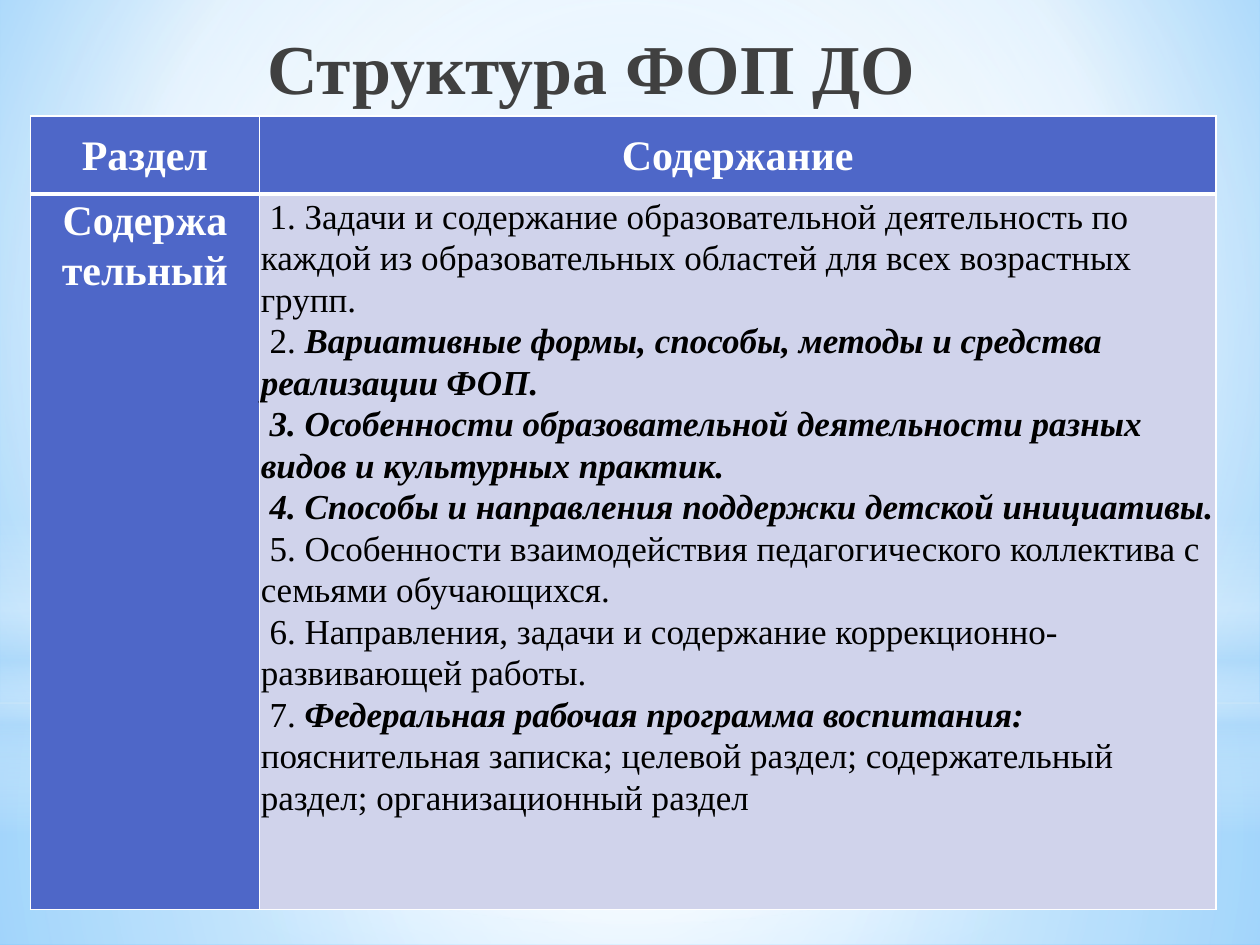
"""Build a slide with a section table on a soft blue gradient background."""
from dataclasses import dataclass

from lxml import etree
from pptx import Presentation
from pptx.dml.color import RGBColor
from pptx.enum.shapes import MSO_SHAPE
from pptx.enum.text import MSO_ANCHOR, PP_ALIGN
from pptx.oxml.ns import qn
from pptx.util import Inches, Pt

RECT, OVAL = MSO_SHAPE.RECTANGLE, MSO_SHAPE.OVAL
LEFT, CENTER, RIGHT = PP_ALIGN.LEFT, PP_ALIGN.CENTER, PP_ALIGN.RIGHT
TOP, MIDDLE = MSO_ANCHOR.TOP, MSO_ANCHOR.MIDDLE


@dataclass(frozen=True)
class Theme:
    font: str = "Times New Roman"
    title: str = "404040"
    white: str = "FFFFFF"
    black: str = "000000"
    accent: str = "4E67C8"
    pale: str = "D0D3EB"
    sky: str = "B4DCFA"
    bg_inner: str = "9ED5FF"
    bg_outer: str = "5BB9FF"
    title_size: int = 40
    head_size: int = 24
    body_size: int = 20


T = Theme()


def add_text(p, text, size=T.body_size, color=T.black, bold=False, italic=False):
    for i, line in enumerate(text.split("\n")):
        if i:
            p.add_line_break()
        if line:
            r = p.add_run()
            r.text = line
            r.font.name, r.font.size = T.font, Pt(size)
            r.font.bold, r.font.italic = bold, italic
            r.font.color.rgb = RGBColor.from_string(color)


def set_gradient(owner, fill, stops, center=None):
    fill.gradient()
    grad = owner.find(".//" + qn("a:gradFill"))
    for child in list(grad):
        grad.remove(child)
    gs_list = etree.SubElement(grad, qn("a:gsLst"))
    for pos, color, opacity in stops:
        gs = etree.SubElement(gs_list, qn("a:gs"), pos=str(pos * 1000))
        clr = etree.SubElement(gs, qn("a:srgbClr"), val=color)
        if opacity < 100:
            etree.SubElement(clr, qn("a:alpha"), val=str(opacity * 1000))
    if center:
        shade = etree.SubElement(grad, qn("a:path"), path="circle")
        sides = {k: str(v * 1000) for k, v in zip("ltrb", center)}
        etree.SubElement(shade, qn("a:fillToRect"), **sides)
    else:
        etree.SubElement(grad, qn("a:lin"), ang="5400000", scaled="0")


prs = Presentation()
prs.slide_width, prs.slide_height = Inches(10), Inches(7.5)
s = prs.slides.add_slide(prs.slide_layouts[5])

set_gradient(s._element, s.background.fill,
             [(0, T.bg_inner, 100), (60, T.white, 100), (100, T.bg_outer, 100)],
             (20, 10, 20, 60))

MID = (50, 50, 50, 50)
glows = [
    (RECT, 5.58, 1.92, MID,
     [(0, T.white, 91), (37, T.white, 76), (100, T.sky, 79)]),
    (RECT, 0, 5.58, MID,
     [(0, T.white, 89), (48, T.white, 62), (100, T.sky, 79)]),
    (RECT, 4.12, 2.5, None,
     [(0, T.white, 0), (29, T.white, 30), (45, T.sky, 40),
      (55, T.white, 26), (65, T.sky, 60), (100, T.white, 0)]),
    (OVAL, 1.75, 5.58, MID, [(0, T.white, 100), (56, T.white, 0)]),
]
for kind, top, height, center, stops in glows:
    sp = s.shapes.add_shape(kind, 0, Inches(top), prs.slide_width, Inches(height))
    sp.shadow.inherit = False
    sp.line.fill.background()
    set_gradient(sp._element, sp.fill, stops, center)

head = dict(size=T.head_size, color=T.white, bold=True)
strong = dict(bold=True, italic=True)
contents = [
    (" 1. Задачи и содержание образовательной деятельность по каждой "
     "из образовательных областей для всех возрастных групп.\n 2. ", {}),
    ("Вариативные формы, способы, методы и средства реализации ФОП.\n"
     " 3. Особенности образовательной деятельности разных видов "
     "и культурных практик.\n"
     " 4. Способы и направления поддержки детской инициативы.\n", strong),
    (" 5. Особенности взаимодействия педагогического коллектива "
     "с семьями обучающихся.\n"
     " 6. Направления, задачи и содержание коррекционно-развивающей работы.\n"
     " 7. ", {}),
    ("Федеральная рабочая программа воспитания: ", strong),
    ("пояснительная записка; целевой раздел; содержательный раздел; "
     "организационный раздел", {}),
]
cells = [
    (0, 0, T.accent, CENTER, [[("Раздел", head)]]),
    (0, 1, T.accent, CENTER, [[("Содержание", head)]]),
    (1, 0, T.accent, CENTER, [[("Содержа", head)], [("тельный", head)]]),
    (1, 1, T.pale, LEFT, [contents]),
]
table = s.shapes.add_table(2, 2, Inches(0.24), Inches(0.92),
                           Inches(9.41), Inches(6.3)).table
for col, width in zip(table.columns, (1.82, 7.59)):
    col.width = Inches(width)
for row, height in zip(table.rows, (0.62, 5.68)):
    row.height = Inches(height)

for row, col, color, align, paragraphs in cells:
    cell = table.cell(row, col)
    cell.margin_left = cell.margin_right = Inches(0.01)
    cell.margin_top = cell.margin_bottom = Inches(0.01)
    cell.vertical_anchor = TOP if row else MIDDLE
    tf = cell.text_frame
    for i, runs in enumerate(paragraphs):
        p = tf.add_paragraph() if i else tf.paragraphs[0]
        p.alignment, p.line_spacing = align, 1.07
        if runs is contents:
            p.space_after = Pt(8)
        for text, style in runs:
            add_text(p, text, **style)
    for side in "LRTB":
        heavy = (row, side) in ((0, "B"), (1, "T"))
        ln = etree.SubElement(cell._tc.tcPr, qn("a:ln" + side),
                              w=str(Pt(3 if heavy else 1)))
        solid = etree.SubElement(ln, qn("a:solidFill"))
        etree.SubElement(solid, qn("a:srgbClr"), val=T.white)
    cell.fill.solid()
    cell.fill.fore_color.rgb = RGBColor.from_string(color)

title = s.shapes.title
s.shapes._spTree.append(title._element)
title.left, title.top = Inches(1.77), Inches(0.1)
title.width, title.height = Inches(5.59), Inches(0.85)
tf = title.text_frame
tf.vertical_anchor = MIDDLE
tf.paragraphs[0].alignment = RIGHT
add_text(tf.paragraphs[0], "Структура ФОП ДО",
         size=T.title_size, color=T.title, bold=True)

prs.save("out.pptx")
